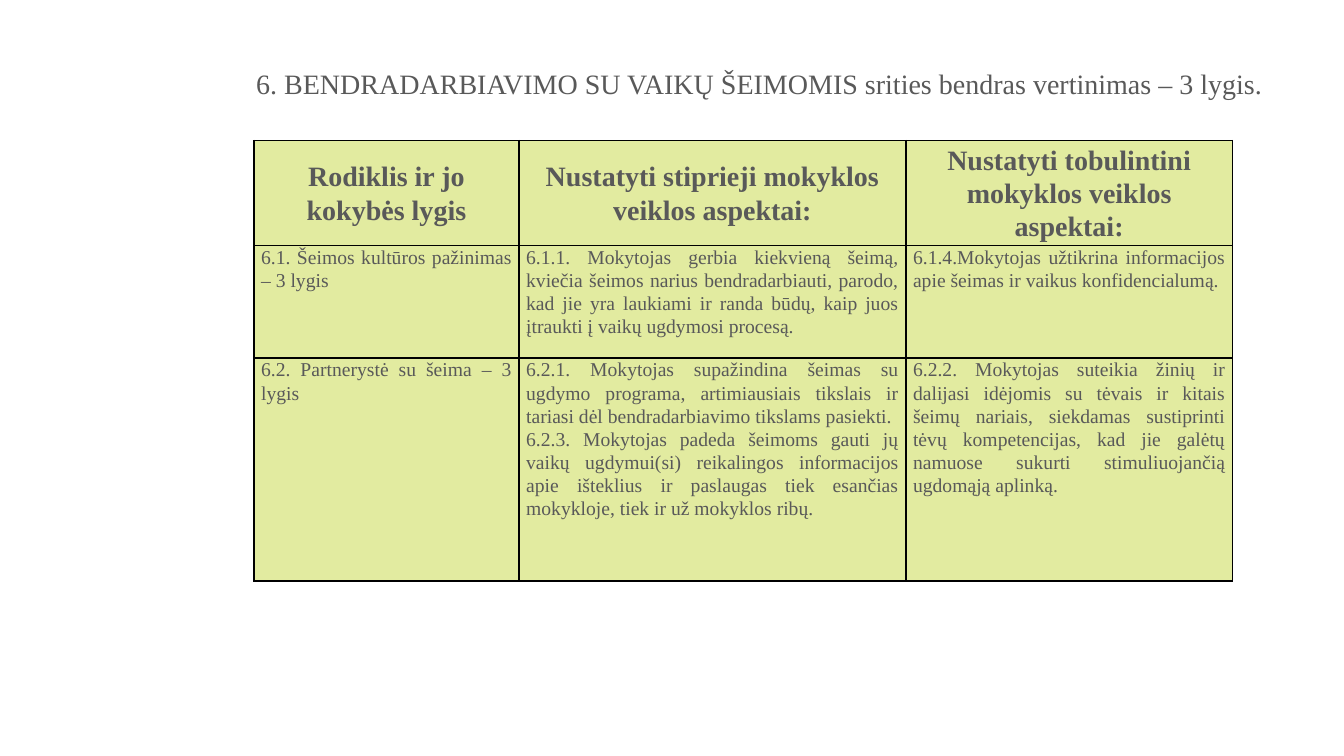
from lxml import etree
from pptx import Presentation
from pptx.dml.color import RGBColor
from pptx.enum.text import MSO_ANCHOR, PP_ALIGN
from pptx.oxml.ns import qn
from pptx.util import Cm, Pt

COLORS = {"text": "595959", "cell": "E2EBA0", "border": "000000"}
FONT = "Times New Roman"

TITLE = "6. BENDRADARBIAVIMO SU VAIKŲ ŠEIMOMIS srities bendras vertinimas – 3 lygis."
ROWS = [
    [
        "Rodiklis ir jo kokybės lygis",
        "Nustatyti stiprieji mokyklos veiklos aspektai:",
        "Nustatyti tobulintini mokyklos veiklos aspektai:",
    ],
    [
        "6.1. Šeimos kultūros pažinimas – 3 lygis",
        "6.1.1. Mokytojas gerbia kiekvieną šeimą, kviečia šeimos narius bendradarbiauti, "
        "parodo, kad jie yra laukiami ir randa būdų, kaip juos įtraukti į vaikų ugdymosi procesą.",
        "6.1.4.Mokytojas užtikrina informacijos apie šeimas ir vaikus konfidencialumą.",
    ],
    [
        "6.2. Partnerystė su šeima – 3 lygis",
        "6.2.1. Mokytojas supažindina šeimas su ugdymo programa, artimiausiais tikslais "
        "ir tariasi dėl bendradarbiavimo tikslams pasiekti.\n"
        "6.2.3. Mokytojas padeda šeimoms gauti jų vaikų ugdymui(si) reikalingos informacijos "
        "apie išteklius ir paslaugas tiek esančias mokykloje, tiek ir už mokyklos ribų.",
        "6.2.2. Mokytojas suteikia žinių ir dalijasi idėjomis su tėvais ir kitais šeimų nariais, "
        "siekdamas sustiprinti tėvų kompetencijas, kad jie galėtų namuose sukurti "
        "stimuliuojančią ugdomąją aplinką.",
    ],
]
COLUMN_WIDTHS = [6.68, 9.75, 8.23]
ROW_HEIGHTS = [2.64, 2.84, 5.62]


def format_text(text_frame, size, bold, alignment, line_spacing):
    for paragraph in text_frame.paragraphs:
        paragraph.alignment = alignment
        paragraph.line_spacing = line_spacing
        for run in paragraph.runs:
            run.font.name = FONT
            run.font.size = Pt(size)
            run.font.bold = bold
            run.font.color.rgb = RGBColor.from_string(COLORS["text"])


def add_borders(cell):
    properties = cell._tc.get_or_add_tcPr()
    for position, side in enumerate(("lnL", "lnR", "lnT", "lnB")):
        line = etree.Element(qn(f"a:{side}"), w=str(Pt(1)))
        fill = etree.SubElement(line, qn("a:solidFill"))
        etree.SubElement(fill, qn("a:srgbClr"), val=COLORS["border"])
        properties.insert(position, line)


presentation = Presentation()
presentation.slide_width = Cm(33.87)
presentation.slide_height = Cm(19.05)
slide = presentation.slides.add_slide(presentation.slide_layouts[5])

title = slide.shapes.title
title.left, title.top, title.width, title.height = Cm(6.12), Cm(0.84), Cm(26.04), Cm(2.69)
title.text_frame.text = TITLE
title.text_frame.vertical_anchor = MSO_ANCHOR.BOTTOM
title.text_frame.margin_bottom = Cm(1)
format_text(title.text_frame, 20, False, PP_ALIGN.CENTER, 0.9)

table = slide.shapes.add_table(
    len(ROWS), len(COLUMN_WIDTHS), Cm(6.4), Cm(3.54),
    Cm(sum(COLUMN_WIDTHS)), Cm(sum(ROW_HEIGHTS)),
).table
table.first_row = False
table.horz_banding = False
for column, width in zip(table.columns, COLUMN_WIDTHS):
    column.width = Cm(width)
for row, height in zip(table.rows, ROW_HEIGHTS):
    row.height = Cm(height)

for row_index, texts in enumerate(ROWS):
    is_header = row_index == 0
    for column_index, text in enumerate(texts):
        cell = table.cell(row_index, column_index)
        cell.text_frame.text = text
        cell.margin_left = cell.margin_right = Cm(0.18)
        cell.margin_top = cell.margin_bottom = 0
        cell.vertical_anchor = MSO_ANCHOR.MIDDLE if is_header else MSO_ANCHOR.TOP
        cell.fill.solid()
        cell.fill.fore_color.rgb = RGBColor.from_string(COLORS["cell"])
        add_borders(cell)
        if is_header:
            format_text(cell.text_frame, 20, True, PP_ALIGN.CENTER, 1.07)
        else:
            format_text(cell.text_frame, 14, False, PP_ALIGN.JUSTIFY, 1.07)

presentation.save("out.pptx")
